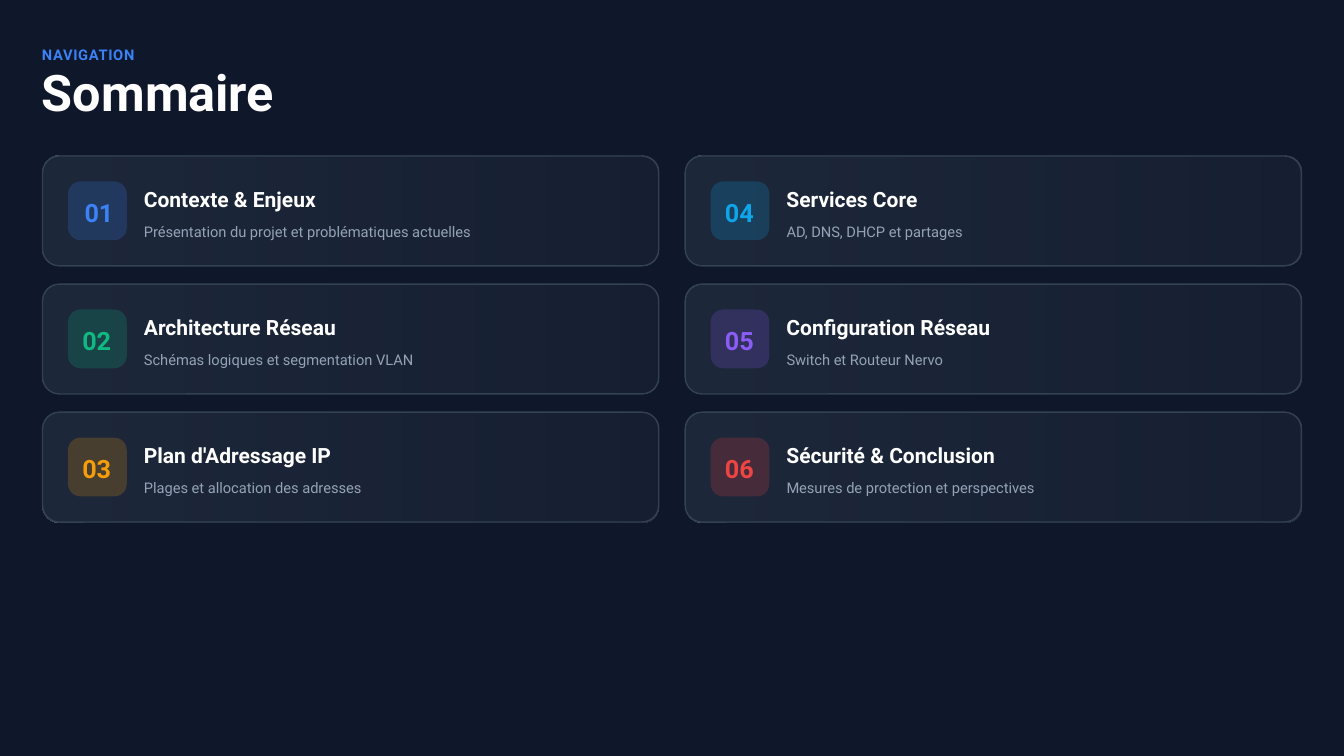
from pptx import Presentation
from pptx.dml import color
from pptx.enum import shapes, text
from pptx.oxml import ns
from pptx.util import Pt
from lxml import etree

COLOURS = {
    "night": "0F172A", "card": "1E293B", "border": "334155",
    "white": "FFFFFF", "grey": "94A3B8", "blue": "3B82F6",
    "green": "10B981", "amber": "F59E0B", "sky": "0EA5E9",
    "violet": "8B5CF6", "red": "EF4444",
}
FONT = "Roboto"

# Chapters run down the left column, then down the right one
CHAPTERS = [
    ("Contexte & Enjeux", "Présentation du projet et problématiques actuelles", "blue"),
    ("Architecture Réseau", "Schémas logiques et segmentation VLAN", "green"),
    ("Plan d'Adressage IP", "Plages et allocation des adresses", "amber"),
    ("Services Core", "AD, DNS, DHCP et partages", "sky"),
    ("Configuration Réseau", "Switch et Routeur Nervo", "violet"),
    ("Sécurité & Conclusion", "Mesures de protection et perspectives", "red"),
]
ROWS = 3
CARD_LEFT, CARD_TOP = 30.4, 111.4
CARD_WIDTH, CARD_HEIGHT = 440.2, 78.5
COLUMN_STEP, ROW_STEP = 459, 91.5


def rgb(name):
    return color.RGBColor.from_string(COLOURS[name])


class Painter:
    """Holds the text style and the current slide."""

    def __init__(self, page, font):
        self.page = page
        self.font = font
        page.background.fill.solid()
        page.background.fill.fore_color.rgb = rgb("night")

    def set_text(self, box, place, words, size, colour, bold=False, leading=1.2, tracking=0):
        box.left, box.top, box.width, box.height = map(Pt, place)
        frame = box.text_frame
        frame.word_wrap = True
        frame.auto_size = text.MSO_AUTO_SIZE.NONE
        frame.vertical_anchor = text.MSO_ANCHOR.MIDDLE
        frame.margin_left = frame.margin_right = 0
        frame.margin_top = frame.margin_bottom = 0
        para = frame.paragraphs[0]
        para.alignment = text.PP_ALIGN.LEFT
        para.line_spacing = leading
        span = para.add_run()
        span.text = words
        span.font.name, span.font.size, span.font.bold = self.font, Pt(size), bold
        span.font.color.rgb = rgb(colour)
        if tracking:
            span.font._element.set("spc", str(int(tracking * 100)))

    def title(self, place, words, size, **style):
        self.set_text(self.page.shapes.title, place, words, size, "white", bold=True, **style)

    def label(self, place, words, size, colour, **style):
        box = self.page.shapes.add_textbox(0, 0, 0, 0)
        self.set_text(box, place, words, size, colour, **style)

    def rounded(self, place, radius):
        shape = self.page.shapes.add_shape(
            shapes.MSO_SHAPE.ROUNDED_RECTANGLE, *map(Pt, place))
        shape.adjustments[0] = radius / min(place[2:])
        shape.shadow.inherit = False
        return shape

    def fade(self, shape, percent):
        """Set the opacity of the last colour in the shape's fill."""
        fill_colours = list(shape._element.spPr.iter(ns.qn("a:srgbClr")))
        etree.SubElement(fill_colours[-1], ns.qn("a:alpha"), val=str(percent * 1000))

    def card(self, place):
        shape = self.rounded(place, 12)
        shape.fill.gradient()
        shape.fill.gradient_angle = 0
        for stop in shape.fill.gradient_stops:
            stop.color.rgb = rgb("card")
        self.fade(shape, 50)
        shape.line.color.rgb = rgb("border")
        shape.line.width = Pt(1)

    def badge(self, place, colour):
        shape = self.rounded(place, 9)
        shape.fill.solid()
        shape.fill.fore_color.rgb = rgb(colour)
        self.fade(shape, 20)
        shape.line.fill.background()


def main():
    deck = Presentation()
    deck.slide_width, deck.slide_height = Pt(960), Pt(540)
    painter = Painter(deck.slides.add_slide(deck.slide_layouts[5]), FONT)

    # Heading
    painter.label((30, 30, 905, 15), "NAVIGATION", 10.5, "blue", bold=True, tracking=0.5)
    painter.title((30, 51, 918, 36), "Sommaire", 36, leading=0.8)

    # Chapter cards
    for index, (name, summary, colour) in enumerate(CHAPTERS):
        column, row = divmod(index, ROWS)
        left = CARD_LEFT + column * COLUMN_STEP
        top = CARD_TOP + row * ROW_STEP
        number_left = left + (30 if index == 0 else 28.4)
        painter.card((left, top, CARD_WIDTH, CARD_HEIGHT))
        painter.badge((left + 18.2, top + 18.2, 42, 42), colour)
        painter.label((number_left, top + 27.4, 31, 24), f"{index + 1:02}", 18, colour,
                      bold=True, leading=1.1)
        painter.label((left + 72.4, top + 18.2, 252, 21), name, 15, "white", bold=True)
        painter.label((left + 72.4, top + 45.4, 250, 15), summary, 10.5, "grey")

    deck.save("out.pptx")


if __name__ == "__main__":
    main()
